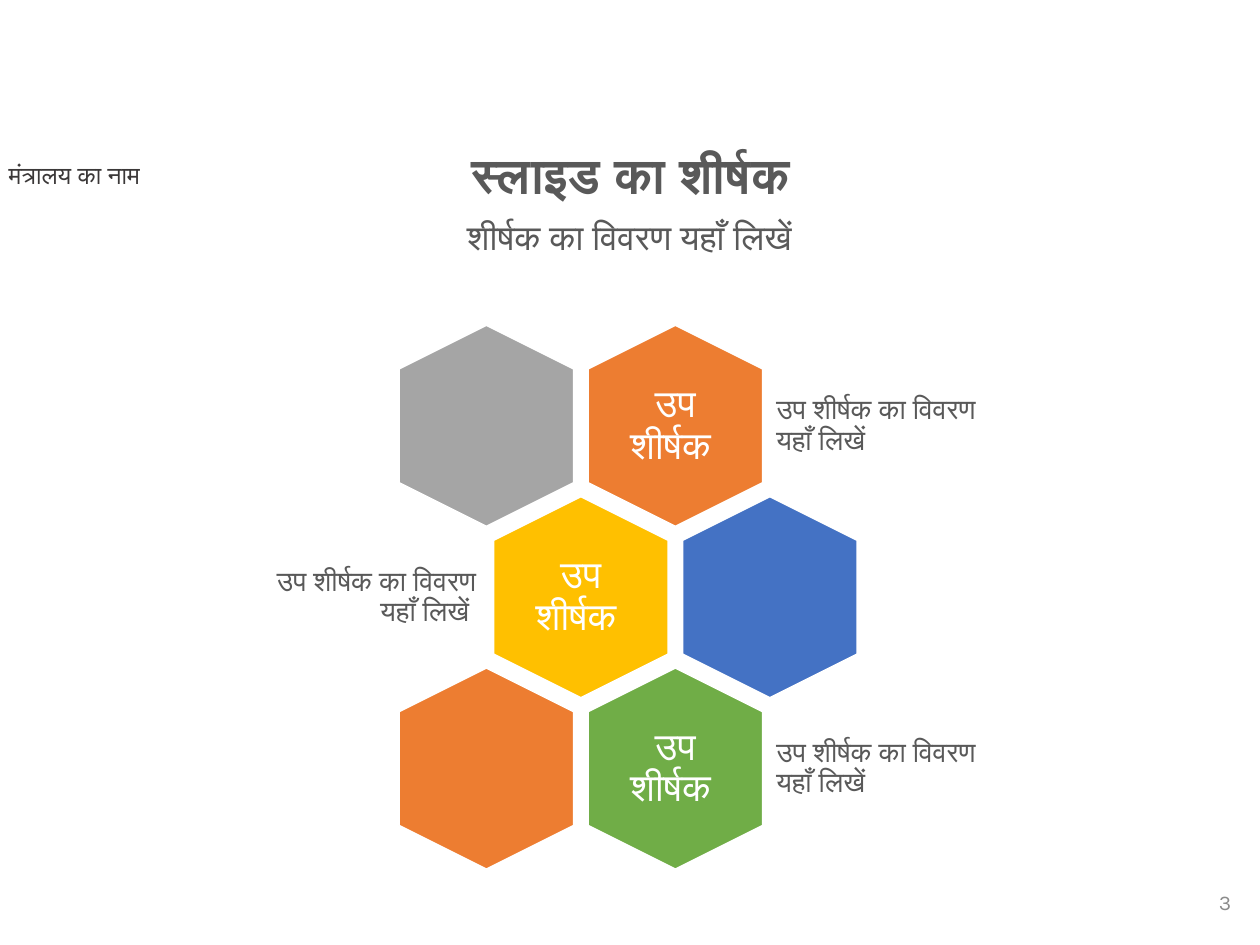
from pptx import Presentation
from pptx.dml.color import RGBColor
from pptx.enum.shapes import MSO_SHAPE
from pptx.enum.text import MSO_ANCHOR, PP_ALIGN
from pptx.util import Inches, Pt

HEXAGON = MSO_SHAPE.HEXAGON
TOP, MIDDLE = MSO_ANCHOR.TOP, MSO_ANCHOR.MIDDLE
LEFT, CENTER, RIGHT = PP_ALIGN.LEFT, PP_ALIGN.CENTER, PP_ALIGN.RIGHT

WHITE = RGBColor(0xFF, 0xFF, 0xFF)
INK = RGBColor(0x3B, 0x38, 0x38)
GREY = RGBColor(0x59, 0x59, 0x59)
PALE = RGBColor(0x8C, 0x8C, 0x8C)
ORANGE = RGBColor(0xED, 0x7D, 0x31)
SILVER = RGBColor(0xA5, 0xA5, 0xA5)
GOLD = RGBColor(0xFF, 0xC0, 0x00)
BLUE = RGBColor(0x44, 0x72, 0xC4)
GREEN = RGBColor(0x70, 0xAD, 0x47)

WIDTH, HEIGHT = 10, 7.5
COL, ROW = 0.75, 1.36
COMB_X, COMB_Y = 3.86, 3.38

LABEL = "उप शीर्षक "
DETAIL = "उप शीर्षक का विवरण यहाँ लिखें"
HEXAGONS = [
    (0, 0, SILVER), (2, 0, ORANGE),
    (1, 1, GOLD), (3, 1, BLUE),
    (0, 2, ORANGE), (2, 2, GREEN),
]
LABELS = [(2, 0), (1, 1), (2, 2)]
DETAILS = [
    (4.16, 0, 2.37, DETAIL, LEFT),
    (-1.17, 1, 2.31, DETAIL + " ", RIGHT),
    (4.16, 2, 2.37, DETAIL, LEFT),
]


class HoneycombSlide:
    """Draws on one slide, by percent of its size or by honeycomb column and row."""

    def __init__(self, slide, font="Calibri"):
        self.slide = slide
        self.font = font

    def percent(self, x, y, w, h):
        return [Inches(share * side / 100)
                for share, side in zip((x, y, w, h), (WIDTH, HEIGHT) * 2)]

    def cell(self, col, row, cols, rows):
        w, h = cols * COL, rows * ROW
        x, y = COMB_X + col * COL - w / 2, COMB_Y + row * ROW - h / 2
        return [Inches(v) for v in (x, y, w, h)]

    def text(self, box, text, size, color, align=LEFT, anchor=TOP, bold=False,
             spacing=1.0, inset=None, font=None):
        tf = self.slide.shapes.add_textbox(*box).text_frame
        tf.word_wrap = True
        tf.vertical_anchor = anchor
        if inset is not None:
            tf.margin_left = tf.margin_right = Inches(inset)
            tf.margin_top = tf.margin_bottom = Inches(inset)
        p = tf.paragraphs[0]
        p.text = text
        p.alignment = align
        p.line_spacing = spacing
        p.font.name = font or self.font
        p.font.size = Pt(size)
        p.font.bold = bold
        p.font.color.rgb = color

    def hexagon(self, col, row, color):
        sp = self.slide.shapes.add_shape(HEXAGON, *self.cell(col, row, 2.13, 1.02))
        sp.shadow.inherit = False
        sp.rotation = 90
        sp.adjustments[0] = 0.25
        sp.adjustments[1] = 1.155
        sp.fill.solid()
        sp.fill.fore_color.rgb = color
        sp.line.color.rgb = WHITE
        sp.line.width = Pt(1)

    def label(self, col, row):
        self.text(self.cell(col, row, 1.28, 0.81), LABEL, 22, WHITE, CENTER, MIDDLE,
                  spacing=0.9, inset=0.09)

    def detail(self, col, row, cols, text, align):
        self.text(self.cell(col, row, cols, 0.71), text, 16, GREY, align, MIDDLE,
                  spacing=0.9, inset=0.07)


def main():
    prs = Presentation()
    prs.slide_width, prs.slide_height = Inches(WIDTH), Inches(HEIGHT)
    s = HoneycombSlide(prs.slides.add_slide(prs.slide_layouts[6]))

    s.text(s.percent(-0.3, 16.27, 21.8, 4.53), "मंत्रालय का नाम", 14, INK)
    s.text(s.percent(18.6, 15.33, 62.9, 6.27), "स्लाइड का शीर्षक", 28, GREY,
           CENTER, bold=True, spacing=0.9)
    s.text(s.percent(14.6, 22.67, 70.7, 8.4), "शीर्षक का विवरण यहाँ लिखें", 20, GREY,
           CENTER, spacing=0.9)
    s.text(s.percent(76.2, 92.8, 22.5, 5.33), "3", 12, PALE, RIGHT, MIDDLE, font="Karla")

    for hexagon in HEXAGONS:
        s.hexagon(*hexagon)
    for label in LABELS:
        s.label(*label)
    for detail in DETAILS:
        s.detail(*detail)

    prs.save("out.pptx")


if __name__ == "__main__":
    main()
